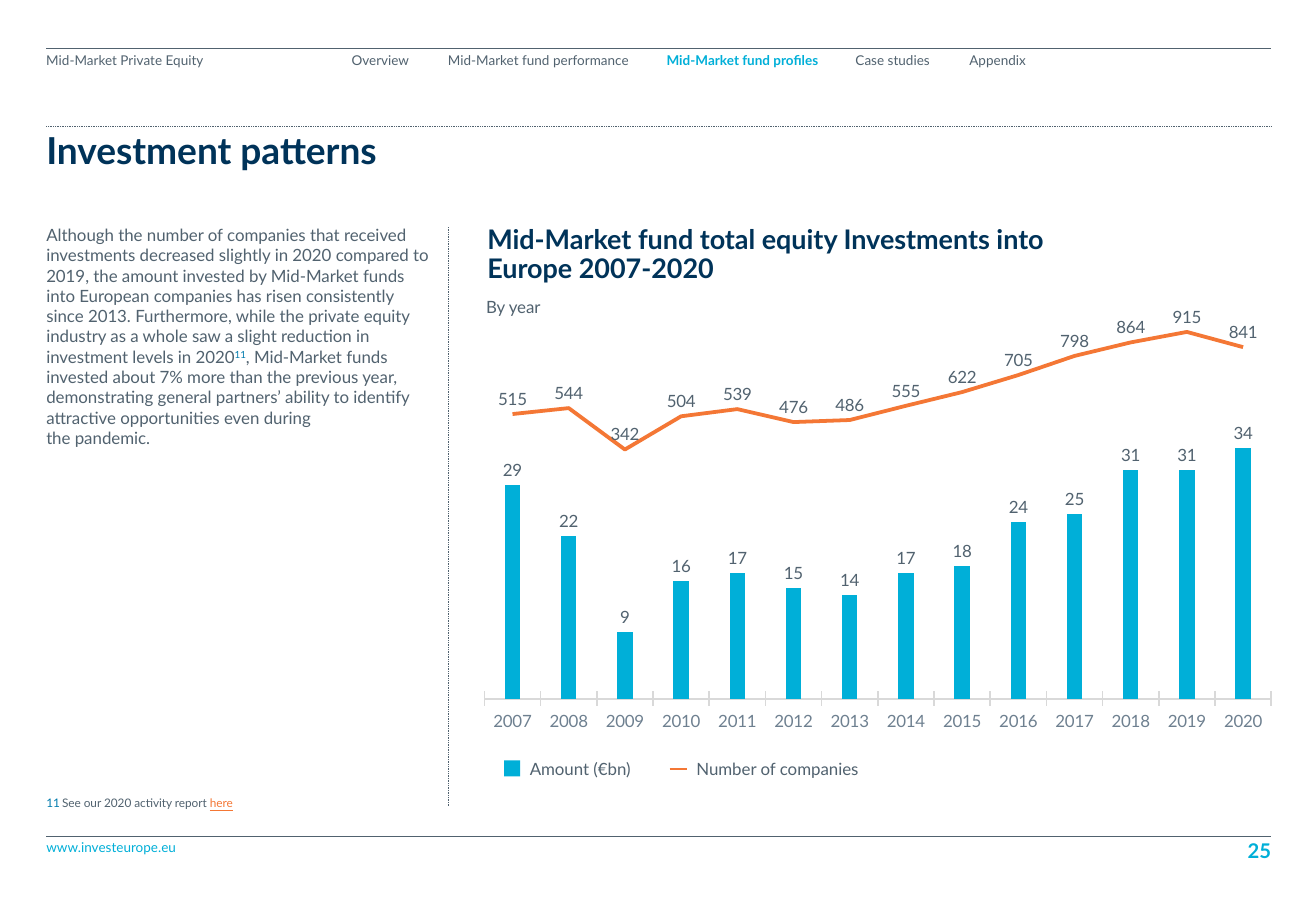
import pptx
import pptx.util
import pptx.chart.data
import pptx.dml.color
import pptx.enum.chart
import pptx.enum.dml
import pptx.enum.shapes
import pptx.enum.text
import pptx.oxml
import pptx.oxml.ns

Pt = pptx.util.Pt
RGB = pptx.dml.color.RGBColor
Align = pptx.enum.text.PP_ALIGN
Anchor = pptx.enum.text.MSO_ANCHOR
Kind = pptx.enum.chart.XL_CHART_TYPE
Spot = pptx.enum.chart.XL_LABEL_POSITION
Tick = pptx.enum.chart.XL_TICK_MARK
DOTS = pptx.enum.dml.MSO_LINE.ROUND_DOT

SLATE = RGB(0x51, 0x62, 0x6F)
STEEL = RGB(0x6E, 0x80, 0x90)
SILVER = RGB(0xD9, 0xD9, 0xD9)
NAVY = RGB(0x00, 0x33, 0x59)
CYAN = RGB(0x00, 0xAF, 0xD8)
BLUE = RGB(0x00, 0x7B, 0xAD)
ORANGE = RGB(0xF4, 0x77, 0x35)

NAV = dict(size=Pt(8), color=SLATE)
LIVE = dict(size=Pt(8), color=CYAN, bold=True)
TITLE = dict(size=Pt(22), color=NAVY, bold=True)
HEAD = dict(size=Pt(16), color=NAVY, bold=True)
BODY = dict(size=Pt(10), color=SLATE)
NOTE = dict(size=Pt(7), color=SLATE)
PAGE = dict(size=Pt(12), color=CYAN, bold=True)

# Menu entries: left edge from the header's left, width, text, format
MENU = [
    (175, 46, "Overview", NAV),
    (234.7, 114, "Mid-Market fund performance", NAV),
    (365.8, 93.6, "Mid-Market fund profiles", LIVE),
    (476.6, 50, "Case studies", NAV),
    (544.3, 39, "Appendix", NAV),
]
INTRO = (
    "Although the number of companies that received investments decreased "
    "slightly in 2020 compared to 2019, the amount invested by Mid-Market "
    "funds into European companies has risen consistently since 2013. "
    "Furthermore, while the private equity industry as a whole saw a slight "
    "reduction in investment levels in 2020"
)
OUTRO = (
    ", Mid-Market funds invested about 7% more than the previous year, "
    "demonstrating general partners’ ability to identify attractive "
    "opportunities even during \vthe pandemic."
)
YEARS = [str(year) for year in range(2007, 2021)]
FIRMS = [515, 544, 342, 504, 539, 476, 486, 555, 622, 705, 798, 864, 915, 841]
AMOUNTS = [29, 22, 9, 16, 17, 15, 14, 17, 18, 24, 25, 31, 31, 34]


def style(font, form):
    font.name = "Lato"
    for key, value in form.items():
        if key == "color":
            font.color.rgb = value
        else:
            setattr(font, key, value)


def fill_text(shape, runs, top=0, align=Align.LEFT, pitch=1.0):
    """Write (text, format) runs as one paragraph; pitch is the line spacing."""
    frame = shape.text_frame
    margins = dict(margin_left=0, margin_top=Pt(top), margin_right=0, margin_bottom=0)
    for key, value in margins.items():
        setattr(frame, key, value)
    frame.word_wrap = True
    frame.auto_size = pptx.enum.text.MSO_AUTO_SIZE.NONE
    frame.vertical_anchor = Anchor.TOP
    para = frame.paragraphs[0]
    para.alignment = align
    para.line_spacing = pitch
    para.space_before = Pt(0)
    for text, form in runs:
        # A vertical tab in the text is a line break
        for place, part in enumerate(text.split("\v")):
            if place:
                para.add_line_break()
            run = para.add_run()
            run.text = part
            style(run.font, form)
    return para


def add_text(slide, box, runs, **form):
    shape = slide.shapes.add_textbox(*map(Pt, box))
    return fill_text(shape, runs, **form)


def add_rule(slide, start, end, color=SLATE, width=0.5, dash=None):
    straight = pptx.enum.shapes.MSO_CONNECTOR.STRAIGHT
    rule = slide.shapes.add_connector(straight, *map(Pt, start + end))
    rule.line.color.rgb = color
    rule.line.width = Pt(width)
    if dash:
        rule.line.dash_style = dash
    props = rule._element.spPr
    props.append(props.makeelement(pptx.oxml.ns.qn("a:effectLst"), {}))


def add_header(slide, box):
    x, y, w, h = box
    add_rule(slide, (x, y), (x + w, y))
    add_rule(slide, (x, y + h), (x + w, y + h), dash=DOTS)
    add_text(slide, (x, y, 136, 33), [("Mid-Market Private Equity", NAV)], top=3, pitch=0.9)
    for left, width, text, form in MENU:
        add_text(slide, (x + left, y, width, 12), [(text, form)],
                 top=3, align=Align.CENTER, pitch=0.9)


def add_title(slide, box):
    title = slide.shapes.title
    for key, value in zip(("left", "top", "width", "height"), box):
        setattr(title, key, Pt(value))
    fill_text(title, [("Investment patterns", TITLE)], top=3, pitch=0.9)


def add_story(slide, box):
    """Body text with its footnote and the dotted divider on the right."""
    x, y, w, h = box
    para = add_text(slide, (x, y, w, 284), [
        (INTRO, BODY), ("11", dict(BODY, color=BLUE)), (OUTRO, BODY)])
    para.runs[1]._r.get_or_add_rPr().set("baseline", "30000")
    add_rule(slide, (x + 238.3, y + 1.4), (x + 238.3, y + h), dash=DOTS)
    foot = y + h - 5.7
    add_text(slide, (x, foot, 10, 10), [("11", dict(NOTE, color=BLUE))], pitch=0.9)
    add_text(slide, (x + 9.4, foot, 220, 12), [
        ("See our 2020 activity report ", NOTE),
        ("here", dict(NOTE, color=ORANGE, underline=True))], pitch=0.9)


def set_plot(chart, area):
    """Fix the inner plot area as shares of the chart and clear the backdrop."""
    space = pptx.oxml.ns.nsdecls("c", "a")
    tags = "".join(f'<c:{tag} val="{value}"/>' for tag, value in
                   [("layoutTarget", "inner"), ("xMode", "edge"), ("yMode", "edge"),
                    *zip("xywh", area)])
    root = chart._chartSpace
    plot = root.chart.plotArea
    for old in plot.findall(pptx.oxml.ns.qn("c:layout")):
        plot.remove(old)
    plot.insert(0, pptx.oxml.parse_xml(
        f"<c:layout {space}><c:manualLayout>{tags}</c:manualLayout></c:layout>"))
    root.chart.addnext(pptx.oxml.parse_xml(
        f"<c:spPr {space}><a:noFill/><a:ln><a:noFill/></a:ln></c:spPr>"))


def add_graph(slide, box, kind, name, values, limit, spot, area):
    data = pptx.chart.data.CategoryChartData(number_format="#,##0")
    data.categories = YEARS
    data.add_series(name, values)
    chart = slide.shapes.add_chart(kind, *map(Pt, box), data).chart
    chart.has_title = chart.has_legend = False
    style(chart.font, BODY)
    set_plot(chart, area)
    scale = chart.value_axis
    form = dict(minimum_scale=0, maximum_scale=limit, has_major_gridlines=False, visible=False)
    for key, value in form.items():
        setattr(scale, key, value)
    plot = chart.plots[0]
    plot.vary_by_categories = False
    plot.has_data_labels = True
    labels = plot.data_labels
    form = dict(show_value=True, position=spot, number_format="#,##0",
                number_format_is_linked=False)
    for key, value in form.items():
        setattr(labels, key, value)
    style(labels.font, BODY)
    return chart


def add_key(slide, box):
    x, y, w, h = box
    mark = slide.shapes.add_shape(pptx.enum.shapes.MSO_SHAPE.RECTANGLE,
                                  *map(Pt, (x, y + 1.4, 9.4, 9.4)))
    mark.shadow.inherit = False
    mark.fill.solid()
    mark.fill.fore_color.rgb = CYAN
    mark.line.fill.background()
    add_text(slide, (x + 15.1, y, 70, h), [("Amount (€bn)", BODY)])
    add_rule(slide, (x + 98, y + 6.5), (x + 108, y + 6.5), ORANGE, 1)
    add_text(slide, (x + 113.8, y, w - 113.8, h), [("Number of companies", BODY)])


def add_panel(slide, box):
    """Heading, the line graph above the column graph, and their key."""
    x, y, w, h = box
    add_text(slide, (x + 13, y, 375, 35),
             [("Mid-Market fund total equity Investments into Europe 2007-2020", HEAD)],
             pitch=0.9)
    firms = add_graph(slide, (x, y + 44.6, w, 156.2), Kind.LINE, "Number of companies",
                      FIRMS, 1000, Spot.ABOVE, (0.023, 0.051, 0.955, 0.779))
    firms.category_axis.visible = False
    curve = firms.plots[0].series[0]
    curve.smooth = False
    curve.format.line.color.rgb = ORANGE
    curve.format.line.width = Pt(2.25)

    sums = add_graph(slide, (x, y + 35.3, w, 295.2), Kind.COLUMN_CLUSTERED, "Amount (€bn)",
                     AMOUNTS, 40, Spot.OUTSIDE_END, (0.023, 0.237, 0.955, 0.593))
    sums.plots[0].gap_width = 265
    bars = sums.plots[0].series[0].format.fill
    bars.solid()
    bars.fore_color.rgb = CYAN
    axis = sums.category_axis
    axis.major_tick_mark = Tick.CROSS
    axis.minor_tick_mark = Tick.NONE
    axis.format.line.color.rgb = SILVER
    axis.format.line.width = Pt(1)
    style(axis.tick_labels.font, dict(BODY, color=STEEL))

    add_key(slide, (x + 23, y + h - 15, 228, 13))
    add_text(slide, (x + 12.2, y + 41.8, 465, 16), [("By year", BODY)])


def add_footer(slide, box):
    x, y, w, h = box
    add_rule(slide, (x, y), (x + w, y))
    add_text(slide, (x, y + 1.4, 264, h), [("www.investeurope.eu", NAV | {"color": CYAN})])
    add_text(slide, (x + w - 176, y + 0.7, 176, h), [("25", PAGE)], align=Align.RIGHT)


def main():
    deck = pptx.Presentation()
    deck.slide_width, deck.slide_height = Pt(779.76), Pt(540)
    slide = deck.slides.add_slide(deck.slide_layouts[5])
    left, width = 27.4, 725.7
    add_header(slide, (left, 28.8, width, 46.1))
    add_title(slide, (left, 75.6, width, 29.5))
    add_story(slide, (left, 133.2, 226.8, 344.9))
    add_panel(slide, (275.8, 133.9, 488.2, 330.5))
    add_footer(slide, (left, 496.1, width, 15))
    deck.save("out.pptx")


if __name__ == "__main__":
    main()
